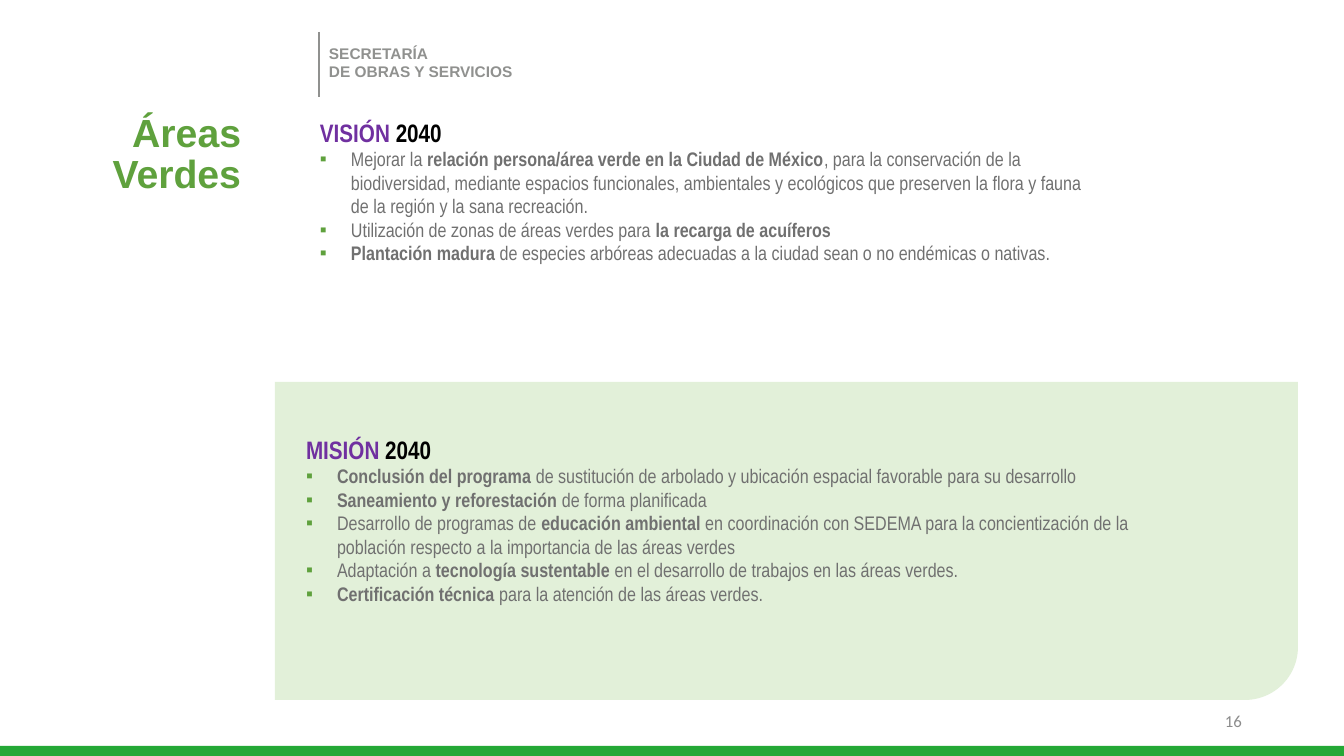
from dataclasses import dataclass

from lxml import etree
from pptx import Presentation
from pptx import util as u
from pptx.dml.color import RGBColor
from pptx.enum import shapes, text
from pptx.oxml.ns import qn

SLIDE_W, SLIDE_H = 1344, 756
EMU_PER_PX = 12192000 / SLIDE_W
GREEN, PURPLE, BLACK = "5FA13D", "7030A0", "000000"
BODY_GRAY, HEADER_GRAY, PAGE_GRAY = "707070", "90918F", "8C8C8C"
PANEL_GREEN, BAR_GREEN = "E2F0D9", "24A836"
BULLET_INDENT = 31


@dataclass(frozen=True)
class Box:
    left: int
    top: int
    width: int
    height: int


@dataclass(frozen=True)
class Section:
    heading: str
    box: Box
    bullets: tuple[str, ...]


@dataclass(frozen=True)
class Block:
    shape: shapes.MSO_SHAPE
    box: Box
    fill: str
    flipped: bool = False


@dataclass(frozen=True)
class Label:
    words: str
    box: Box
    font: str
    size: int
    color: str
    bold: bool
    align: text.PP_ALIGN
    anchor: text.MSO_ANCHOR = text.MSO_ANCHOR.TOP
    line_pt: int | None = None


BLOCKS = (
    Block(shapes.MSO_SHAPE.ROUND_1_RECTANGLE, Box(275, 382, 1023, 318), PANEL_GREEN, True),
    Block(shapes.MSO_SHAPE.RECTANGLE, Box(0, 746, SLIDE_W, 10), BAR_GREEN),
)

TITLE = Label("Áreas Verdes", Box(40, 115, 201, 82), "Arial", 28, GREEN, True,
              text.PP_ALIGN.RIGHT, line_pt=29)

LABELS = (
    Label("SECRETARÍA\nDE OBRAS Y SERVICIOS", Box(329, 44, 206, 56), "Arial", 11,
          HEADER_GRAY, True, text.PP_ALIGN.LEFT),
    Label("16", Box(960, 701, 282, 40), "Calibri", 12, PAGE_GRAY, False,
          text.PP_ALIGN.RIGHT, text.MSO_ANCHOR.MIDDLE),
)

# Text between asterisks is bold.
SECTIONS = (
    Section("VISIÓN ", Box(320, 117, 770, 175), (
        "Mejorar la *relación persona/área verde en la Ciudad de México*, para la conservación "
        "de la biodiversidad, mediante espacios funcionales, ambientales y ecológicos que "
        "preserven la flora y fauna de la región y la sana recreación.",
        "Utilización de zonas de áreas verdes para *la recarga de acuíferos*",
        "*Plantación madura *de especies arbóreas adecuadas a la ciudad sean o no endémicas "
        "o nativas.",
    )),
    Section("MISIÓN ", Box(306, 434, 833, 238), (
        "*Conclusión del programa *de sustitución de arbolado y ubicación espacial favorable "
        "para su desarrollo",
        "*Saneamiento y reforestación *de forma planificada",
        "Desarrollo de programas de *educación ambiental *en coordinación con SEDEMA para la "
        "concientización de la población respecto a la importancia de las áreas verdes",
        "Adaptación a *tecnología sustentable *en el desarrollo de trabajos en las áreas verdes.",
        "*Certificación técnica *para la atención de las áreas verdes.",
    )),
)


def px(n: int) -> u.Emu:
    return u.Emu(round(n * EMU_PER_PX))


def rgb(color: str) -> RGBColor:
    return RGBColor.from_string(color)


def place(sp, box: Box) -> None:
    sp.left, sp.top = px(box.left), px(box.top)
    sp.width, sp.height = px(box.width), px(box.height)


def style(font, name: str, size: int, color: str, bold: bool) -> None:
    font.name, font.size, font.bold = name, u.Pt(size), bold
    font.color.rgb = rgb(color)


def prepare_frame(tf, anchor: text.MSO_ANCHOR) -> None:
    tf.margin_left = tf.margin_right = tf.margin_top = tf.margin_bottom = 0
    tf.word_wrap = True
    tf.auto_size = text.MSO_AUTO_SIZE.NONE
    tf.vertical_anchor = anchor


def set_bullet(p, indent: int, char: str = "") -> None:
    pPr = p._p.get_or_add_pPr()
    pPr.set("marL", str(px(indent)))
    pPr.set("indent", str(-px(indent)))
    if not char:
        etree.SubElement(pPr, qn("a:buNone"))
        return
    color = etree.SubElement(pPr, qn("a:buClr"))
    etree.SubElement(color, qn("a:srgbClr"), val=GREEN)
    etree.SubElement(pPr, qn("a:buFont"), typeface="Arial")
    etree.SubElement(pPr, qn("a:buChar"), char=char)


def add_run(p, words: str, size: int, color: str, bold: bool) -> None:
    r = p.add_run()
    r.text = words
    style(r.font, "Arial Narrow", size, color, bold)


def draw_block(s, block: Block) -> None:
    sp = s.shapes.add_shape(block.shape, 0, 0, 0, 0)
    place(sp, block.box)
    sp.shadow.inherit = False
    sp.fill.solid()
    sp.fill.fore_color.rgb = rgb(block.fill)
    sp.line.fill.background()
    if block.flipped:
        sp._element.spPr.find(qn("a:xfrm")).set("flipV", "1")


def draw_rule(s) -> None:
    line = s.shapes.add_connector(shapes.MSO_CONNECTOR.STRAIGHT,
                                  px(319), px(32), px(319), px(97))
    line.line.color.rgb = rgb(HEADER_GRAY)
    line.line.width = u.Pt(1)
    etree.SubElement(line._element.spPr, qn("a:effectLst"))


def fill_label(sp, label: Label) -> None:
    place(sp, label.box)
    tf = sp.text_frame
    prepare_frame(tf, label.anchor)
    tf.text = label.words
    for p in tf.paragraphs:
        p.alignment = label.align
        if label.line_pt:
            p.line_spacing = u.Pt(label.line_pt)
        for r in p.runs:
            style(r.font, label.font, label.size, label.color, label.bold)


def fill_section(sp, section: Section) -> None:
    place(sp, section.box)
    tf = sp.text_frame
    prepare_frame(tf, text.MSO_ANCHOR.TOP)
    p = tf.paragraphs[0]
    p.space_before = u.Pt(0)
    set_bullet(p, 0)
    add_run(p, section.heading, 18, PURPLE, True)
    add_run(p, "2040", 18, BLACK, True)
    for bullet in section.bullets:
        p = tf.add_paragraph()
        p.level = 1
        p.space_before = u.Pt(0)
        set_bullet(p, BULLET_INDENT, "▪")
        for i, words in enumerate(bullet.split("*")):
            if words:
                add_run(p, words, 14, BODY_GRAY, i % 2 == 1)


def main() -> None:
    prs = Presentation()
    prs.slide_width, prs.slide_height = px(SLIDE_W), px(SLIDE_H)
    s = prs.slides.add_slide(prs.slide_layouts.get_by_name("Two Content"))
    title, *bodies = s.placeholders
    for block in BLOCKS:
        draw_block(s, block)
    draw_rule(s)
    for label in LABELS:
        fill_label(s.shapes.add_textbox(0, 0, 0, 0), label)
    fill_label(title, TITLE)
    for body, section in zip(bodies, SECTIONS):
        fill_section(body, section)
        s.shapes._spTree.append(body._element)
    prs.save("out.pptx")


if __name__ == "__main__":
    main()
